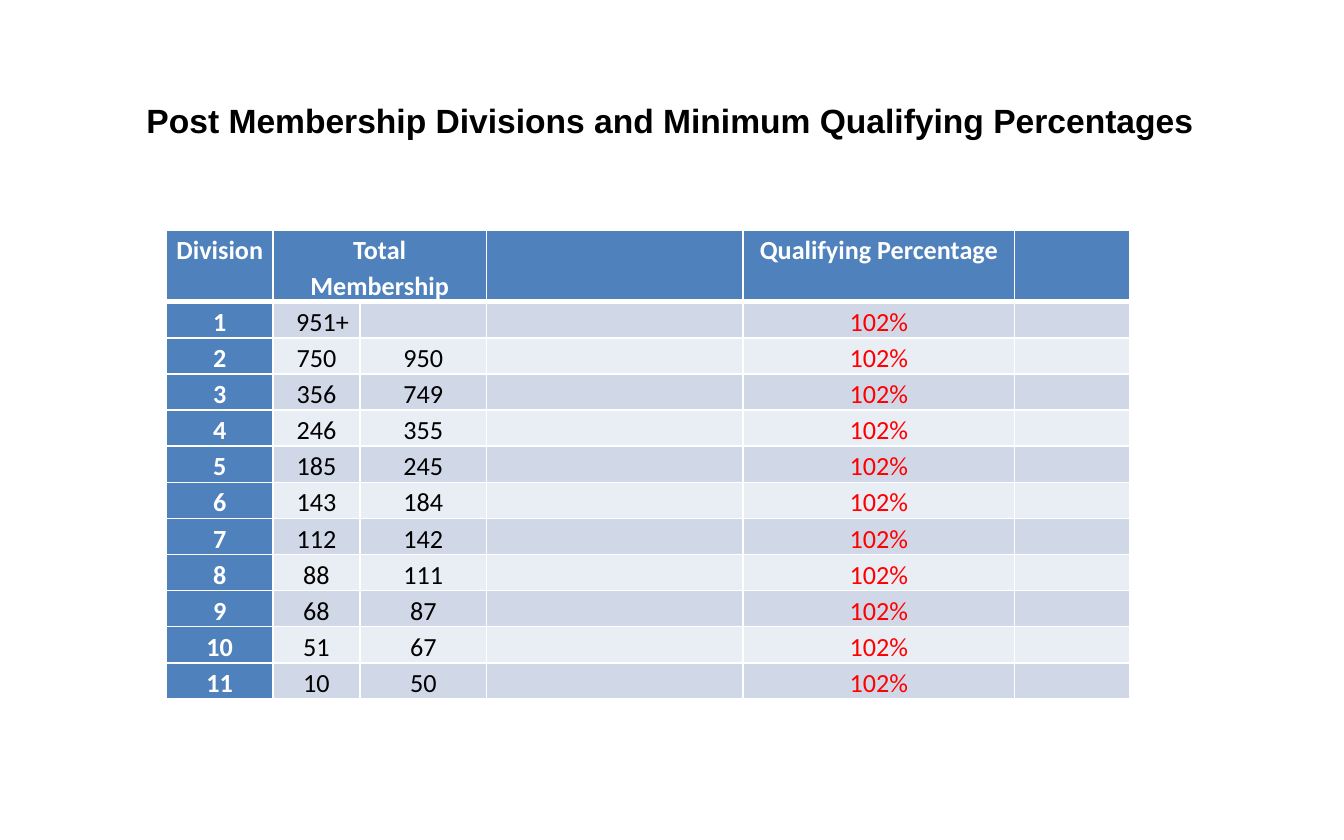
"""Build the slide of post membership divisions and qualifying percentages."""
from dataclasses import dataclass

import lxml.etree
import pptx
import pptx.dml.color
import pptx.enum.text
import pptx.oxml.ns
import pptx.util

Inches = pptx.util.Inches
COLORS = {"header": "4F81BD", "odd": "D0D8E8", "even": "E9EDF4",
          "white": "FFFFFF", "black": "000000", "percentage": "FF0000"}
CENTER = pptx.enum.text.PP_ALIGN.CENTER
COLUMN_WIDTHS = [0.79, 0.65, 0.94, 1.91, 2.02, 0.86]
ROW_HEIGHT = 0.24
TEXT_SIZE = 14


@dataclass
class Division:
    number: int
    low: str
    high: str
    percentage: str = "102%"


DIVISIONS = [Division(number, low, high) for number, (low, high) in enumerate([
    ("951+", ""), ("750", "950"), ("356", "749"), ("246", "355"),
    ("185", "245"), ("143", "184"), ("112", "142"), ("88", "111"),
    ("68", "87"), ("51", "67"), ("10", "50")], start=1)]


def rgb(name: str) -> pptx.dml.color.RGBColor:
    return pptx.dml.color.RGBColor.from_string(COLORS[name])


def write(frame, text: str, *, size: float = TEXT_SIZE, font: str = "Calibri",
          color: str = "black", bold: bool = False, align=None, spacing=None) -> None:
    paragraph = frame.paragraphs[0]
    paragraph.alignment = align
    paragraph.line_spacing = spacing
    if not text:
        end = lxml.etree.SubElement(paragraph._p, pptx.oxml.ns.qn("a:endParaRPr"))
        end.set("sz", str(size * 100))
        return
    run = paragraph.add_run()
    run.text = text
    run.font.size = pptx.util.Pt(size)
    run.font.name = font
    run.font.bold = bold
    run.font.color.rgb = rgb(color)


def set_borders(cell, widths: dict[str, float]) -> None:
    properties = cell._tc.get_or_add_tcPr()
    for index, (side, width) in enumerate(widths.items()):
        line = lxml.etree.Element(pptx.oxml.ns.qn(f"a:ln{side}"), w=str(pptx.util.Pt(width)))
        fill = lxml.etree.SubElement(line, pptx.oxml.ns.qn("a:solidFill"))
        lxml.etree.SubElement(fill, pptx.oxml.ns.qn("a:srgbClr"), val=COLORS["white"])
        properties.insert(index, line)


def fill_cell(cell, text: str, *, fill: str, color: str, bold: bool,
              top: float = 1, bottom: float = 1) -> None:
    cell.margin_left = cell.margin_right = Inches(0.07)
    cell.margin_top = cell.margin_bottom = 0
    cell.fill.solid()
    cell.fill.fore_color.rgb = rgb(fill)
    set_borders(cell, {"L": 1, "R": 1, "T": top, "B": bottom})
    write(cell.text_frame, text, color=color, bold=bold, align=CENTER, spacing=1.15)


def add_title(slide) -> None:
    title = slide.shapes.add_textbox(Inches(1.09), Inches(0.45), Inches(8.1), Inches(0.98))
    frame = title.text_frame
    frame.word_wrap = True
    frame.vertical_anchor = pptx.enum.text.MSO_ANCHOR.MIDDLE
    frame.margin_left = frame.margin_right = 0
    frame.margin_top, frame.margin_bottom = Inches(0.28), Inches(0.38)
    write(frame, "Post Membership Divisions and Minimum Qualifying Percentages",
          size=18, font="Arial", bold=True)


def add_divisions(slide, divisions: list[Division]) -> None:
    holder = slide.shapes.add_table(len(divisions) + 1, len(COLUMN_WIDTHS), Inches(1.24),
                                    Inches(1.71), Inches(sum(COLUMN_WIDTHS)), Inches(3.3))
    table = holder.table
    for column, width in zip(table.columns, COLUMN_WIDTHS):
        column.width = Inches(width)
    for row in table.rows:
        row.height = Inches(ROW_HEIGHT)
    holder.height = Inches(3.3)

    headings = ["Division", "Total Membership", "", "", "Qualifying Percentage", ""]
    for column, heading in enumerate(headings):
        fill_cell(table.cell(0, column), heading, fill="header", color="white",
                  bold=True, bottom=3)
    table.cell(0, 1).merge(table.cell(0, 2))

    for row, division in enumerate(divisions, start=1):
        band = "odd" if row % 2 else "even"
        values = [str(division.number), division.low, division.high, "",
                  division.percentage, ""]
        text_colors = ["white", "black", "black", "black", "percentage", "black"]
        for column, (value, color) in enumerate(zip(values, text_colors)):
            fill_cell(table.cell(row, column), value, fill=band if column else "header",
                      color=color, bold=column == 0, top=3 if row == 1 else 1)
    table.cell(1, 1).margin_left = Inches(0.16)


def main() -> None:
    presentation = pptx.Presentation()
    presentation.slide_width, presentation.slide_height = Inches(10), Inches(6.25)
    slide = presentation.slides.add_slide(presentation.slide_layouts[6])
    add_title(slide)
    add_divisions(slide, DIVISIONS)
    presentation.save("out.pptx")


if __name__ == "__main__":
    main()
